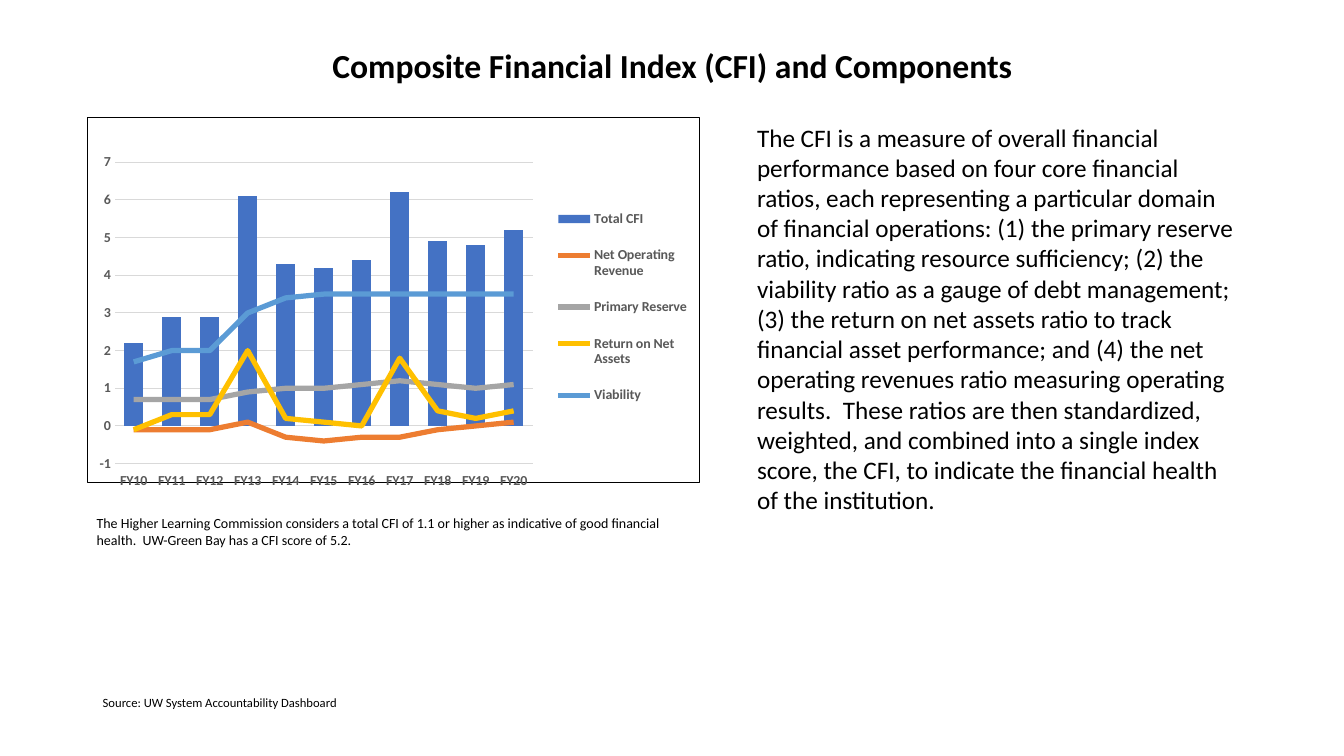
from lxml.etree import SubElement
from pptx import Presentation
from pptx.chart.data import CategoryChartData
from pptx.dml.color import RGBColor
from pptx.enum.chart import (XL_CHART_TYPE, XL_LEGEND_POSITION, XL_MARKER_STYLE,
                             XL_TICK_LABEL_POSITION, XL_TICK_MARK)
from pptx.enum.text import MSO_ANCHOR, PP_ALIGN
from pptx.oxml import parse_xml
from pptx.oxml.ns import nsdecls, qn
from pptx.util import Inches, Pt

FONT = "Calibri"
COLORS = {
    "text": "000000",
    "label": "595959",
    "grid": "D9D9D9",
    "Total CFI": "4472C4",
    "Net Operating Revenue": "ED7D31",
    "Primary Reserve": "A5A5A5",
    "Return on Net Assets": "FFC000",
    "Viability": "5B9BD5",
}
RATIOS = {
    "Total CFI": (2.2, 2.9, 2.9, 6.1, 4.3, 4.2, 4.4, 6.2, 4.9, 4.8, 5.2),
    "Net Operating Revenue": (-0.1, -0.1, -0.1, 0.1, -0.3, -0.4, -0.3, -0.3, -0.1, 0, 0.1),
    "Primary Reserve": (0.7, 0.7, 0.7, 0.9, 1, 1, 1.1, 1.2, 1.1, 1, 1.1),
    "Return on Net Assets": (-0.1, 0.3, 0.3, 2, 0.2, 0.1, 0, 1.8, 0.4, 0.2, 0.4),
    "Viability": (1.7, 2, 2, 3, 3.4, 3.5, 3.5, 3.5, 3.5, 3.5, 3.5),
}
TITLE = "Composite Financial Index (CFI) and Components"
EXPLANATION = (
    "The CFI is a measure of overall financial performance based on four core "
    "financial ratios, each representing a particular domain of financial operations: "
    "(1) the primary reserve ratio, indicating resource sufficiency; (2) the viability "
    "ratio as a gauge of debt management; (3) the return on net assets ratio to track "
    "financial asset performance; and (4) the net operating revenues ratio measuring "
    "operating results.  These ratios are then standardized, weighted, and combined into "
    "a single index score, the CFI, to indicate the financial health of the institution."
)
BENCHMARK = (
    "The Higher Learning Commission considers a total CFI of 1.1 or higher as indicative "
    "of good financial health.  UW-Green Bay has a CFI score of 5.2."
)
SOURCE = "Source: UW System Accountability Dashboard"


def rgb(name):
    return RGBColor.from_string(COLORS[name])


def style_font(font, size, color, bold=False):
    font.name = FONT
    font.size = Pt(size)
    font.bold = bold
    font.color.rgb = rgb(color)


def style_line(line, color, width):
    line.color.rgb = rgb(color)
    line.width = Pt(width)


def add_text(slide, text, left, top, width, height, size, bold=False):
    box = slide.shapes.add_textbox(Inches(left), Inches(top), Inches(width), Inches(height))
    frame = box.text_frame
    frame.word_wrap = True
    paragraph = frame.paragraphs[0]
    run = paragraph.add_run()
    run.text = text
    style_font(run.font, size, "text", bold)
    return frame


def add_title(slide):
    frame = add_text(slide, TITLE, 0.92, 0.4, 11.5, 0.54, 24, bold=True)
    frame.vertical_anchor = MSO_ANCHOR.MIDDLE
    frame.paragraphs[0].alignment = PP_ALIGN.CENTER
    frame.paragraphs[0].line_spacing = 0.9


def manual_layout(x, y, w, h, inner=False):
    layout = parse_xml(f'<c:layout {nsdecls("c")}><c:manualLayout/></c:layout>')
    manual = layout[0]
    if inner:
        SubElement(manual, qn("c:layoutTarget"), val="inner")
    for mode in ("xMode", "yMode"):
        SubElement(manual, qn(f"c:{mode}"), val="edge")
    for side, share in zip("xywh", (x, y, w, h)):
        SubElement(manual, qn(f"c:{side}"), val=str(share))
    return layout


def place(parent, index, layout):
    for old in parent.findall(qn("c:layout")):
        parent.remove(old)
    parent.insert(index, layout)


def move_ratios_to_lines(chart):
    bars = chart.element.find(".//" + qn("c:barChart"))
    lines = parse_xml(f'<c:lineChart {nsdecls("c")}><c:grouping val="standard"/>'
                      '<c:varyColors val="0"/></c:lineChart>')
    for ratio in bars.findall(qn("c:ser"))[1:]:
        for flag in ratio.findall(qn("c:invertIfNegative")):
            ratio.remove(flag)
        lines.append(ratio)
    SubElement(lines, qn("c:marker"), val="1")
    for axis in bars.findall(qn("c:axId")):
        SubElement(lines, qn("c:axId"), val=axis.get("val"))
    bars.addnext(lines)


def style_axes(chart):
    years, scores = chart.category_axis, chart.value_axis
    for axis in (years, scores):
        axis.major_tick_mark = axis.minor_tick_mark = XL_TICK_MARK.NONE
        style_font(axis.tick_labels.font, 10, "label", bold=True)
    years.tick_label_position = XL_TICK_LABEL_POSITION.LOW
    style_line(years.format.line, "grid", 0.75)
    scores.minimum_scale, scores.maximum_scale, scores.major_unit = -1, 7, 1
    scores.tick_labels.number_format = "General"
    scores.tick_labels.number_format_is_linked = False
    scores.format.line.fill.background()
    style_line(scores.major_gridlines.format.line, "grid", 0.75)


def add_legend(chart):
    chart.has_legend = True
    legend = chart.legend
    legend.position = XL_LEGEND_POSITION.RIGHT
    legend.include_in_layout = False
    style_font(legend.font, 10, "label", bold=True)
    legend_xml = chart.element.find(".//" + qn("c:legend"))
    place(legend_xml, 1, manual_layout(0.76, 0.2, 0.23, 0.64))


def add_border(chart):
    border = parse_xml(
        f'<c:spPr {nsdecls("c", "a")}><a:noFill/><a:ln w="{Pt(0.75)}"><a:solidFill>'
        f'<a:srgbClr val="{COLORS["text"]}"/></a:solidFill></a:ln></c:spPr>')
    chart.element.find(qn("c:chart")).addnext(border)


def add_cfi_chart(slide):
    data = CategoryChartData()
    data.categories = [f"FY{year}" for year in range(10, 21)]
    for name, values in RATIOS.items():
        data.add_series(name, values)
    chart = slide.shapes.add_chart(
        XL_CHART_TYPE.COLUMN_CLUSTERED, Inches(0.86), Inches(1.16),
        Inches(6.08), Inches(3.69), data).chart
    chart.has_title = False
    style_font(chart.font, 10, "text")
    move_ratios_to_lines(chart)
    totals, components = chart.plots
    totals.gap_width, totals.overlap = 100, -27
    totals.vary_by_categories = False
    fill = totals.series[0].format.fill
    fill.solid()
    fill.fore_color.rgb = rgb("Total CFI")
    for component in components.series:
        style_line(component.format.line, component.name, 3.75)
        component.marker.style = XL_MARKER_STYLE.NONE
        component.smooth = False
    style_axes(chart)
    add_legend(chart)
    add_border(chart)
    place(chart.element.find(".//" + qn("c:plotArea")), 0,
          manual_layout(0.045, 0.123, 0.683, 0.826, inner=True))


def main():
    deck = Presentation()
    deck.slide_width, deck.slide_height = Inches(13.33), Inches(7.5)
    slide = deck.slides.add_slide(deck.slide_layouts[6])
    add_title(slide)
    add_text(slide, SOURCE, 0.92, 6.84, 2.98, 0.25, 9)
    add_cfi_chart(slide)
    add_text(slide, EXPLANATION, 7.41, 1.16, 5.01, 4.04, 18)
    add_text(slide, BENCHMARK, 0.86, 5.06, 6.08, 0.44, 10)
    deck.save("out.pptx")


if __name__ == "__main__":
    main()
